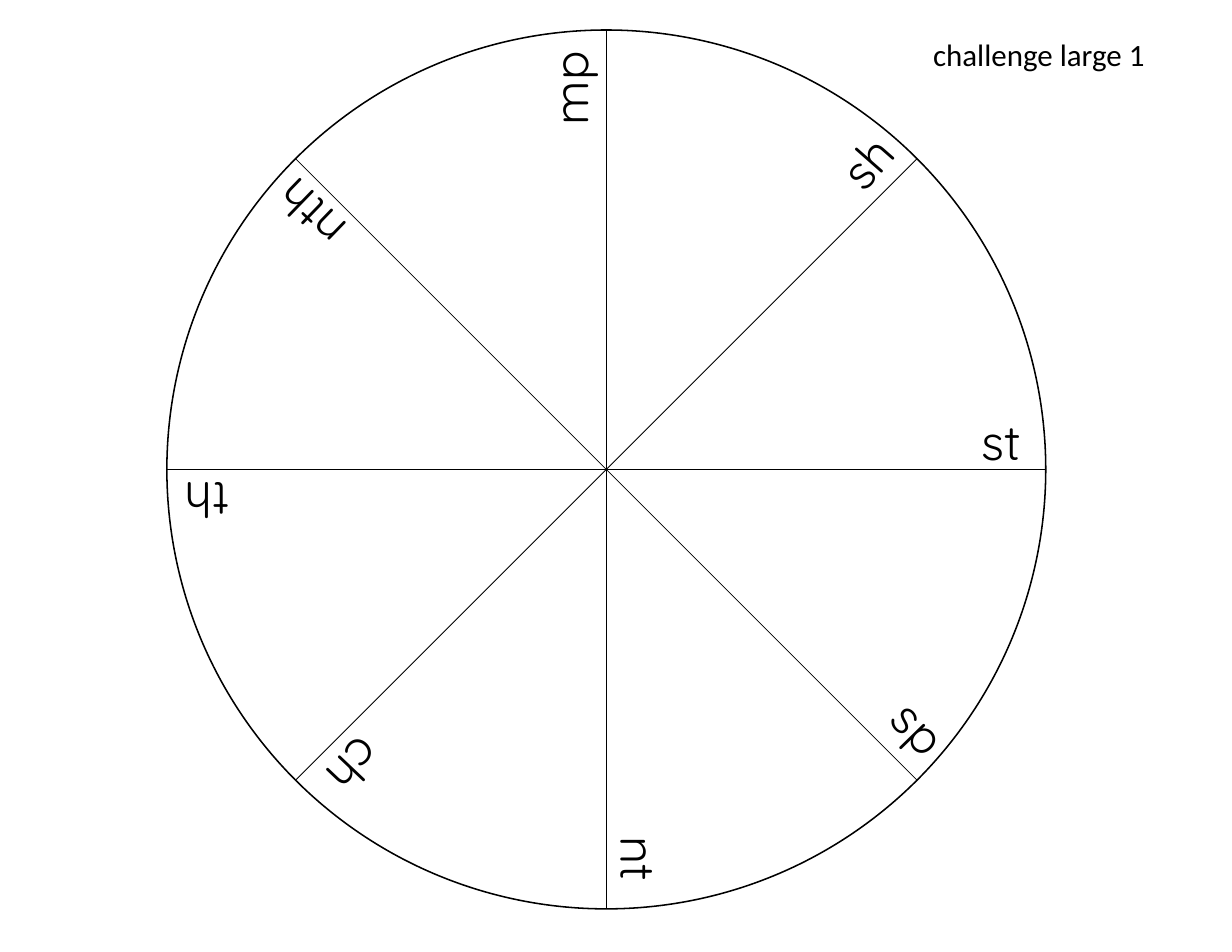
from math import cos, radians, sin

from lxml.etree import SubElement
from pptx import Presentation
from pptx.dml.color import RGBColor
from pptx.enum.shapes import MSO_CONNECTOR, MSO_SHAPE
from pptx.enum.text import MSO_ANCHOR, MSO_AUTO_SIZE, PP_ALIGN
from pptx.oxml.ns import qn
from pptx.util import Pt

COLORS = {"ink": "000000", "paper": "FFFFFF"}
INK = RGBColor.from_string(COLORS["ink"])
FRAME = {
    "word_wrap": True,
    "auto_size": MSO_AUTO_SIZE.NONE,
    "vertical_anchor": MSO_ANCHOR.TOP,
}
SOUND_FONT = {"name": "Quicksand", "size": Pt(31.4)}
TITLE_FONT = {"name": "Calibri", "size": Pt(19.9)}

WHEEL = (107.3, 19.3, 565)
SOUND_HEIGHT = 45.4
# sound, box width, rotation, distance from hub, height above spoke
SOUNDS = [
    ("st", 58.3, 0, 263, 18),
    ("sp", 85.7, 45.7, 278.5, 25),
    ("nt", 63.4, 90, 260.6, 21.2),
    ("ch", 69.8, 133.5, 260, 20.9),
    ("th", 63.4, 180, 267.5, 20.9),
    ("nth", 90, 224, 265.3, 18.8),
    ("mp", 84.2, 270, 256.3, 23.8),
    ("sh", 57.6, 311.3, 263.5, 21.6),
]


def apply(target, values):
    for key, value in values.items():
        setattr(target, key, value)


def write(frame, text, font):
    apply(frame, FRAME)
    line = frame.paragraphs[0]
    line.alignment = PP_ALIGN.LEFT
    run = line.add_run()
    run.text = text
    apply(run.font, font)
    run.font.color.rgb = INK


def outline(shape, width):
    shape.line.color.rgb = INK
    shape.line.width = Pt(width)


def draw_wheel(slide, left, top, size):
    wheel = slide.shapes.add_group_shape().shapes
    rim = wheel.add_shape(MSO_SHAPE.OVAL, Pt(left), Pt(top), Pt(size), Pt(size))
    rim.shadow.inherit = False
    rim.fill.background()
    outline(rim, 1)
    radius = size / 2
    hub_x, hub_y = left + radius, top + radius
    for angle in (90, 0, 45, -45):
        dx, dy = radius * cos(radians(angle)), radius * sin(radians(angle))
        spoke = wheel.add_connector(
            MSO_CONNECTOR.STRAIGHT,
            Pt(hub_x - dx), Pt(hub_y - dy), Pt(hub_x + dx), Pt(hub_y + dy),
        )
        outline(spoke, 0.5)
        SubElement(spoke.element.spPr, qn("a:effectLst"))


def place_sounds(slide, left, top, size):
    labels = slide.shapes.add_group_shape().shapes
    hub_x, hub_y = left + size / 2, top + size / 2
    for index, (sound, width, rotation, distance, rise) in enumerate(SOUNDS):
        angle = radians(index * 45)
        x = hub_x + distance * cos(angle) + rise * sin(angle)
        y = hub_y + distance * sin(angle) - rise * cos(angle)
        label = labels.add_textbox(
            Pt(x - width / 2), Pt(y - SOUND_HEIGHT / 2), Pt(width), Pt(SOUND_HEIGHT)
        )
        label.rotation = rotation
        write(label.text_frame, sound, SOUND_FONT)


def place_title(slide, left, top, width, height):
    title = slide.shapes.title
    apply(title, {"left": Pt(left), "top": Pt(top), "width": Pt(width), "height": Pt(height)})
    write(title.text_frame, "challenge large 1", TITLE_FONT)


def main():
    deck = Presentation()
    apply(deck, {"slide_width": Pt(792), "slide_height": Pt(612)})
    slide = deck.slides.add_slide(deck.slide_layouts[5])
    slide.background.fill.solid()
    slide.background.fill.fore_color.rgb = RGBColor.from_string(COLORS["paper"])
    draw_wheel(slide, *WHEEL)
    place_sounds(slide, *WHEEL)
    place_title(slide, 592.6, 19.4, 164.2, 31.7)
    deck.save("out.pptx")


if __name__ == "__main__":
    main()
